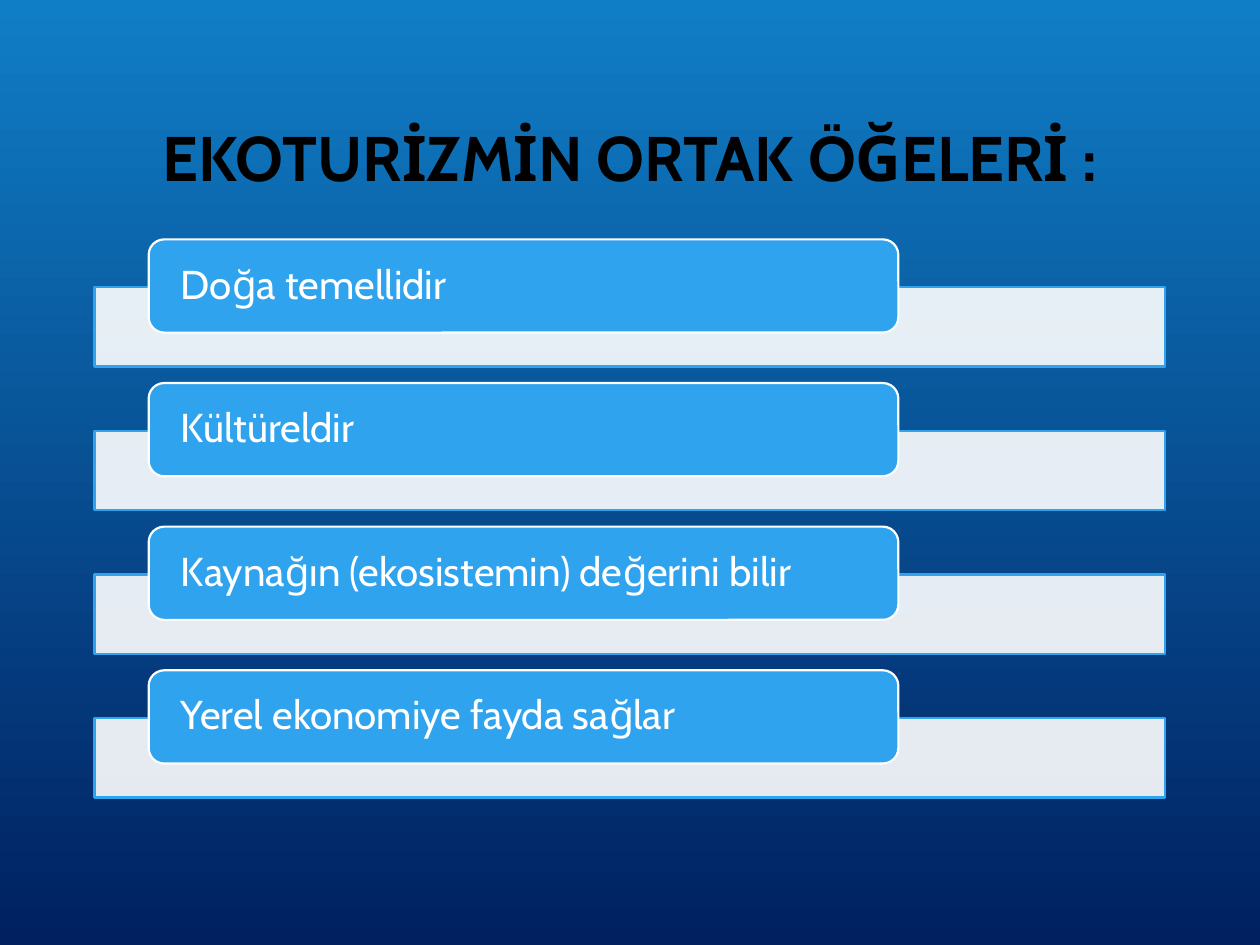
from pptx import Presentation
from pptx.dml.color import RGBColor
from pptx.enum.shapes import MSO_SHAPE as Shape
from pptx.enum.text import MSO_ANCHOR as Anchor, PP_ALIGN as Align
from pptx.oxml.ns import qn
from pptx.util import Inches, Pt
from lxml.etree import SubElement

SKY = RGBColor(0x10, 0x7E, 0xC6)
NAVY = RGBColor(0x00, 0x20, 0x60)
BLUE = RGBColor(0x2F, 0xA3, 0xEE)
WHITE = RGBColor(0xFF, 0xFF, 0xFF)
BLACK = RGBColor(0x00, 0x00, 0x00)

ITEMS = [
    "Doğa temellidir",
    "Kültüreldir",
    "Kaynağın (ekosistemin) değerini bilir",
    "Yerel ekonomiye fayda sağlar",
]
TOP, STEP = 1.9, 1.14


class Deck:
    face = "Cabin"
    edge = Pt(1.25)

    def __init__(self, width, height):
        self.deck = Presentation()
        self.deck.slide_width = Inches(width)
        self.deck.slide_height = Inches(height)
        self.slide = self.deck.slides.add_slide(self.deck.slide_layouts[5])

    def back(self, start, end):
        fill = self.slide.background.fill
        fill.gradient()
        fill.gradient_angle = 270
        for stop, color in zip(fill.gradient_stops, (start, end)):
            stop.color.rgb = color

    def words(self, shape, text, size, color, align, bold=False):
        frame = shape.text_frame
        frame.word_wrap = True
        frame.vertical_anchor = Anchor.MIDDLE
        par = frame.paragraphs[0]
        par.text = text
        par.alignment = align
        par.line_spacing = 0.9
        par.font.name = self.face
        par.font.size = Pt(size)
        par.font.bold = bold
        par.font.color.rgb = color
        return frame

    def title(self, text, left, top, width, height):
        shape = self.slide.shapes.title
        shape.left, shape.top = Inches(left), Inches(top)
        shape.width, shape.height = Inches(width), Inches(height)
        frame = self.words(shape, text, 36, BLACK, Align.CENTER, True)
        frame.margin_bottom = Inches(0.6)

    def box(self, kind, left, top, width, height, fill, line):
        place = [Inches(n) for n in (left, top, width, height)]
        shape = self.slide.shapes.add_shape(kind, *place)
        shape.shadow.inherit = False
        shape.fill.solid()
        shape.fill.fore_color.rgb = fill
        shape.line.color.rgb = line
        shape.line.width = self.edge
        return shape

    def bar(self, top):
        shape = self.box(Shape.RECTANGLE, 0.75, top, 8.5, 0.63, WHITE, BLUE)
        tint = next(shape.element.spPr.iter(qn("a:srgbClr")))
        SubElement(tint, qn("a:alpha"), val="90000")

    def label(self, text, top):
        shape = self.box(Shape.ROUNDED_RECTANGLE, 1.18, top, 5.95, 0.74, BLUE, WHITE)
        frame = self.words(shape, text, 23, WHITE, Align.LEFT)
        frame.margin_left = frame.margin_right = Inches(0.22)
        frame.margin_top = frame.margin_bottom = 0


def main():
    deck = Deck(10, 7.5)
    deck.back(SKY, NAVY)
    deck.title("EKOTURİZMİN ORTAK ÖĞELERİ :", 0.75, 0.68, 8.5, 1.75)
    for row, text in enumerate(ITEMS):
        top = TOP + row * STEP
        deck.bar(top + 0.38)
        deck.label(text, top)
    deck.deck.save("out.pptx")


if __name__ == "__main__":
    main()
